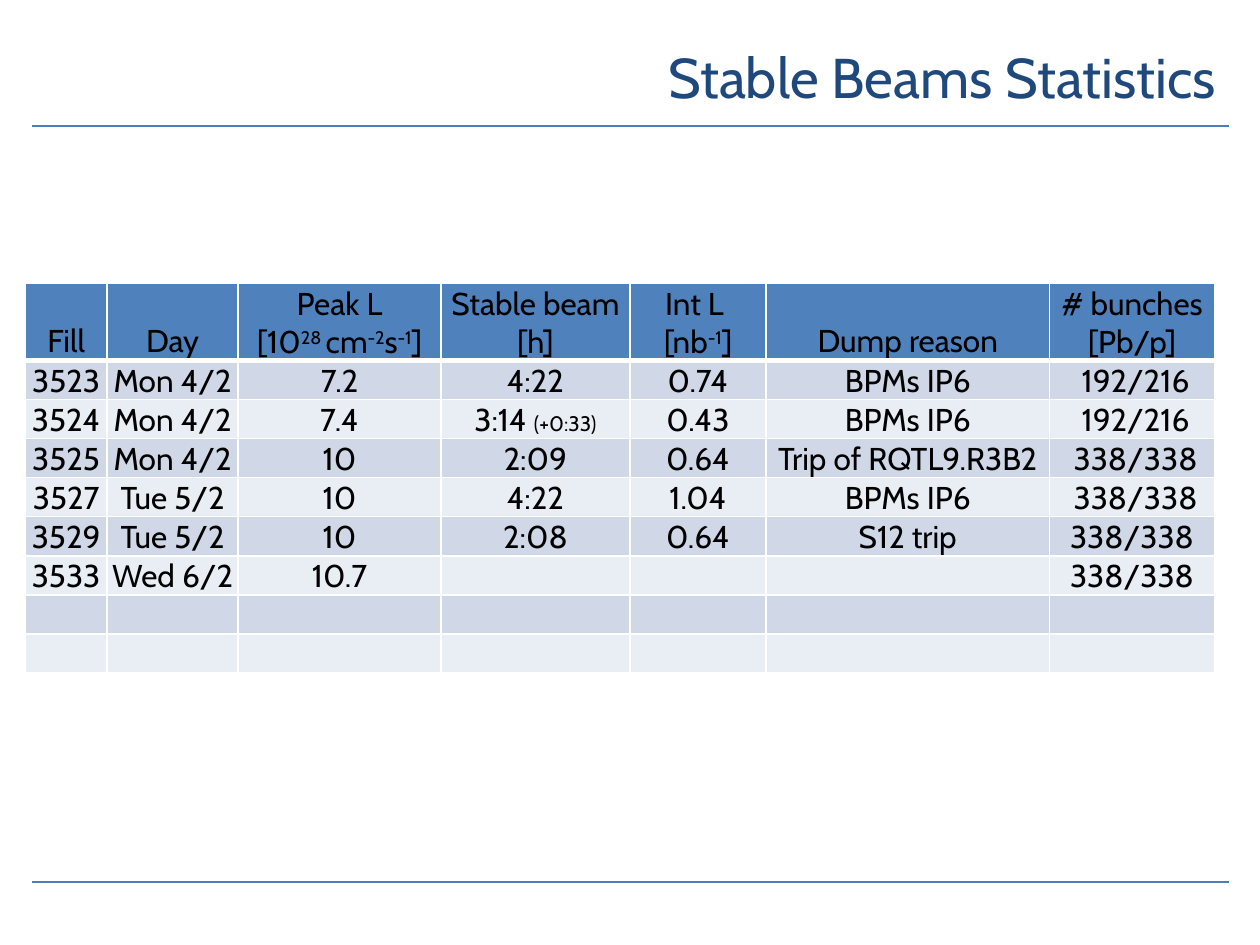
from lxml.etree import SubElement
from pptx import Presentation
from pptx.dml.color import RGBColor
from pptx.enum.shapes import MSO_CONNECTOR
from pptx.enum.text import MSO_ANCHOR, PP_ALIGN
from pptx.oxml.ns import qn
from pptx.util import Inches, Pt

# Content: a cell is a list of paragraphs, a paragraph a list of runs;
# a plain string is a single run, and a tuple is (text, style)
TITLE = "Stable Beams Statistics"
SUPER, SMALL = "super", "small"
HEADERS = [
    "Fill",
    "Day",
    [["Peak L\n[10", ("28 ", SUPER), "cm", ("-2", SUPER), "s", ("-1", SUPER), "]"]],
    "Stable beam [h]",
    [["Int L \n[nb", ("-1", SUPER), "]"]],
    "Dump reason",
    [["# bunches"], ["[Pb/p]"]],
]
FILLS = [
    ["3523", "Mon 4/2", "7.2", "4:22", "0.74", "BPMs IP6", " 192/216"],
    ["3524", "Mon 4/2", "7.4", [["3:14 ", ("(+0:33)", SMALL)]], "0.43", "BPMs IP6", " 192/216"],
    ["3525", "Mon 4/2", "10", "2:09", "0.64", "Trip of RQTL9.R3B2", " 338/338"],
    ["3527", "Tue 5/2", "10", "4:22", "1.04", "BPMs IP6", " 338/338"],
    ["3529", "Tue 5/2", "10", "2:08", "0.64", "S12 trip", "338/338"],
    ["3533", "Wed 6/2", "10.7", "", "", "", "338/338"],
    [""] * 7,
    [""] * 7,
]

# Layout, in inches
WIDTH, HEIGHT = 10, 7.5
MARGIN = 0.25
RULES = [1, 7]
COLUMNS = [0.65, 1.04, 1.61, 1.5, 1.08, 2.25, 1.31]
HEADER_HEIGHT, ROW_HEIGHT = 0.41, 0.31

FONT = "Cabin"
NAVY = RGBColor(0x1F, 0x49, 0x7D)
RULE_BLUE = RGBColor(0x4B, 0x7E, 0xBC)
HEADER_BLUE = RGBColor(0x4F, 0x81, 0xBD)
BANDS = [RGBColor(0xD0, 0xD8, 0xE8), RGBColor(0xE9, 0xED, 0xF4)]
BLACK = RGBColor(0, 0, 0)


def add_span(para, text, size, color, style=None):
    span = para.add_run()
    span.text = text
    span.font.name = FONT
    span.font.size = Pt(12 if style == SMALL else size)
    span.font.color.rgb = color
    if style == SUPER:
        span.font._element.set("baseline", "30000")


def set_borders(cell, top, bottom):
    props = cell._tc.get_or_add_tcPr()
    for side, points in (("L", 1), ("R", 1), ("T", top), ("B", bottom)):
        line = SubElement(props, qn(f"a:ln{side}"), w=str(Pt(points)))
        fill = SubElement(line, qn("a:solidFill"))
        SubElement(fill, qn("a:srgbClr"), val="FFFFFF")


def fill_cell(cell, content):
    cell.vertical_anchor = MSO_ANCHOR.BOTTOM
    cell.margin_left = cell.margin_right = cell.margin_top = Inches(0.01)
    cell.margin_bottom = 0
    if not content:
        return
    paragraphs = [[content]] if isinstance(content, str) else content
    for index, runs in enumerate(paragraphs):
        frame = cell.text_frame
        para = frame.add_paragraph() if index else frame.paragraphs[0]
        para.alignment = PP_ALIGN.CENTER
        for run in runs:
            text, style = (run, None) if isinstance(run, str) else run
            for number, part in enumerate(text.split("\n")):
                if number:
                    para.add_line_break()
                add_span(para, part, 18, BLACK, style)


deck = Presentation()
deck.slide_width, deck.slide_height = Inches(WIDTH), Inches(HEIGHT)
page = deck.slides.add_slide(deck.slide_layouts[6])

# Rules above and below the content
for y in RULES:
    rule = page.shapes.add_connector(
        MSO_CONNECTOR.STRAIGHT, Inches(MARGIN), Inches(y), Inches(WIDTH - MARGIN), Inches(y))
    rule.line.color.rgb = RULE_BLUE
    rule.line.width = Pt(1.5)
    SubElement(rule._element.spPr, qn("a:effectLst"))

# Title
box = page.shapes.add_textbox(Inches(1.75), Inches(0.17), Inches(8), Inches(0.87))
box.text_frame.word_wrap = True
box.text_frame.vertical_anchor = MSO_ANCHOR.MIDDLE
para = box.text_frame.paragraphs[0]
para.alignment = PP_ALIGN.RIGHT
add_span(para, TITLE, 32, NAVY)

# Table of fills
rows = [HEADERS] + FILLS
table = page.shapes.add_table(
    len(rows), len(COLUMNS), Inches(0.2), Inches(2.25), Inches(sum(COLUMNS)), Inches(3.13)).table
table.first_row = table.horz_banding = False
for column, width in zip(table.columns, COLUMNS):
    column.width = Inches(width)
for r, contents in enumerate(rows):
    table.rows[r].height = Inches(ROW_HEIGHT if r else HEADER_HEIGHT)
    for c, content in enumerate(contents):
        cell = table.cell(r, c)
        fill_cell(cell, content)
        set_borders(cell, top=3 if r == 1 else 1, bottom=1 if r else 3)
        cell.fill.solid()
        cell.fill.fore_color.rgb = BANDS[(r - 1) % 2] if r else HEADER_BLUE

deck.save("out.pptx")
